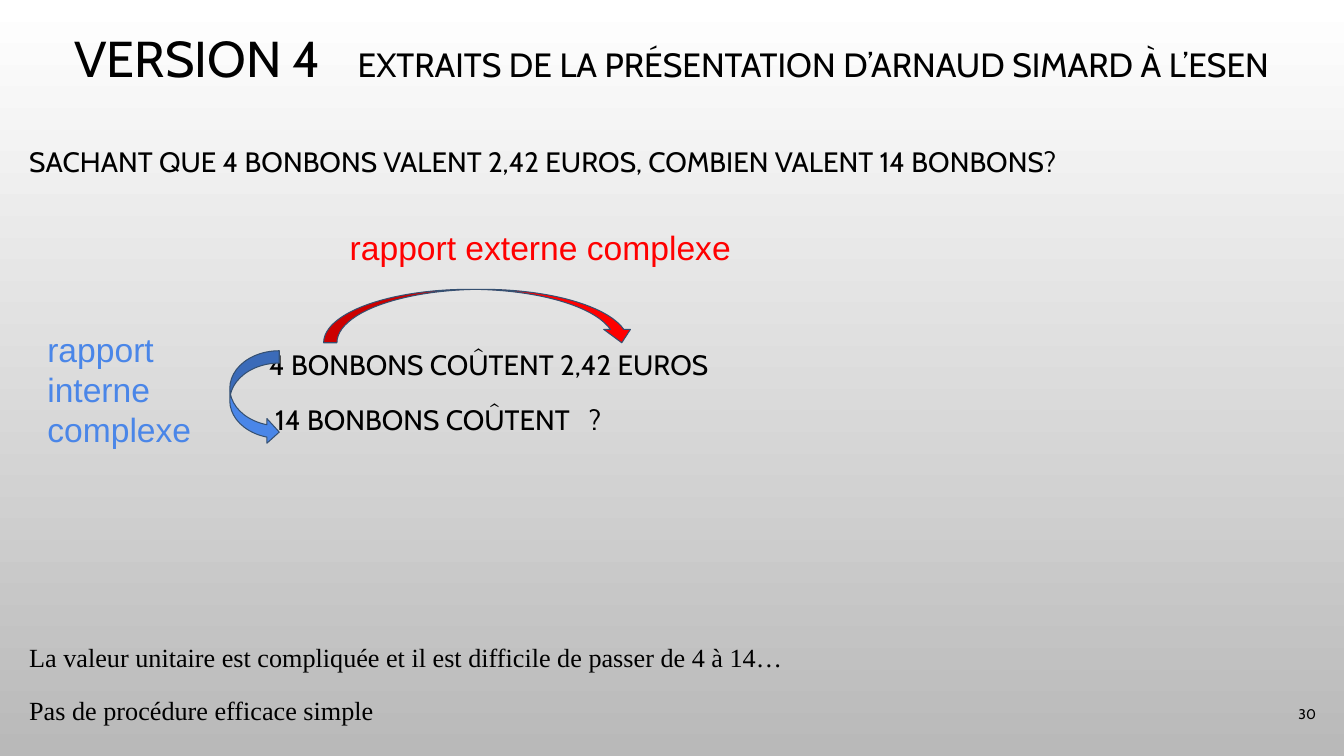
from dataclasses import dataclass

from pptx import Presentation
from pptx.dml.color import RGBColor
from pptx.enum.shapes import MSO_SHAPE
from pptx.enum.text import MSO_ANCHOR, PP_ALIGN
from pptx.util import Inches, Pt

WIDTH, HEIGHT = Inches(13.33), Inches(7.5)
COLUMN, ROW = WIDTH / 100, HEIGHT / 100


@dataclass(frozen=True)
class Theme:
    ink: str = "000000"
    external: str = "FF0000"
    internal: str = "4A86E8"
    outline: str = "355071"
    sky: str = "FFFFFF"
    ground: str = "B9B9B9"
    display: str = "Cabin"
    label: str = "Arial"
    prose: str = "Times New Roman"
    title_size: float = 36
    label_size: float = 24
    body_size: float = 20
    prose_size: float = 18.7
    number_size: float = 10
    outline_width: float = 0.75


@dataclass(frozen=True)
class Box:
    left: float
    top: float
    width: float
    height: float

    def inner(self, column, row, columns, rows):
        return Box(self.left + column, self.top + row, columns, rows)

    def emu(self):
        return (round(self.left * COLUMN), round(self.top * ROW),
                round(self.width * COLUMN), round(self.height * ROW))


THEME = Theme()


def apply(target, formats):
    for attribute, value in formats.items():
        setattr(target, attribute, value)


def add_run(paragraph, words, font, size, color=THEME.ink, tracking=0):
    run = paragraph.add_run()
    run.text = words
    apply(run.font, {"name": font, "size": Pt(size)})
    run.font.color.rgb = RGBColor.from_string(color)
    if tracking:
        run._r.get_or_add_rPr().set("spc", str(tracking * 100))


def add_frame(slide, box, inset=0.13, anchor=MSO_ANCHOR.TOP):
    frame = slide.shapes.add_textbox(*box.emu()).text_frame
    sides = ("margin_left", "margin_top", "margin_right", "margin_bottom")
    apply(frame, dict.fromkeys(sides, Inches(inset)))
    apply(frame, {"word_wrap": True, "vertical_anchor": anchor})
    return frame


def add_lines(slide, box, lines, font, size, color=THEME.ink, spacing=1.0, gap=0):
    frame = add_frame(slide, box)
    for index, words in enumerate(lines):
        paragraph = frame.add_paragraph() if index else frame.paragraphs[0]
        before = Pt(gap if index else 0)
        apply(paragraph, {"line_spacing": spacing, "space_before": before})
        add_run(paragraph, words, font, size, color)
    return frame


def add_arrow(slide, box, kind, color):
    arrow = slide.shapes.add_shape(kind, *box.emu())
    arrow.shadow.inherit = False
    arrow.fill.solid()
    arrow.fill.fore_color.rgb = RGBColor.from_string(color)
    arrow.line.color.rgb = RGBColor.from_string(THEME.outline)
    arrow.line.width = Pt(THEME.outline_width)


def paint_background(slide):
    fill = slide.background.fill
    fill.gradient()
    fill.gradient_angle = 270
    for stop, color in zip(fill.gradient_stops, (THEME.sky, THEME.ground)):
        stop.color.rgb = RGBColor.from_string(color)


def build_title(slide, box):
    heading = add_frame(slide, box).paragraphs[0]
    apply(heading, {"alignment": PP_ALIGN.CENTER, "line_spacing": 0.9})
    add_run(heading, "VERSION 4", THEME.display, THEME.title_size)
    add_run(heading, " ", THEME.display, THEME.title_size, tracking=18)
    add_run(heading, "EXTRAITS DE LA PRÉSENTATION D’ARNAUD SIMARD À L’ESEN",
            THEME.display, THEME.label_size)


def build_question(slide, box):
    add_lines(slide, box,
              ["SACHANT QUE 4 BONBONS VALENT 2,42 EUROS, COMBIEN VALENT 14 BONBONS?"],
              THEME.display, THEME.body_size, spacing=1.2)


def build_ratios(slide, box):
    costs = add_lines(slide, box.inner(16.5, 15.07, 37.5, 15.33),
                      ["4 BONBONS COÛTENT 2,42 EUROS", "14 BONBONS COÛTENT"],
                      THEME.display, THEME.body_size, spacing=1.2, gap=10.7)
    unknown = costs.paragraphs[1]
    unknown._p.get_or_add_pPr().set("marL", str(Inches(0.06)))
    add_run(unknown, " ", THEME.display, THEME.body_size, tracking=9)
    add_run(unknown, "?", THEME.display, THEME.body_size)

    ratios = [
        (["rapport", "interne", "complexe"], THEME.internal,
         (0, 13.47, 13.28, 21.6),
         MSO_SHAPE.CURVED_RIGHT_ARROW, (14.55, 18.13, 3.68, 12.4)),
        (["rapport externe complexe"], THEME.external,
         (22.5, 0, 35.33, 8.93),
         MSO_SHAPE.CURVED_DOWN_ARROW, (21.53, 10, 23.18, 7.07)),
    ]
    for lines, color, label_place, kind, arrow_place in ratios:
        add_arrow(slide, box.inner(*arrow_place), kind, color)
        add_lines(slide, box.inner(*label_place), lines,
                  THEME.label, THEME.label_size, color)


def build_conclusion(slide, box):
    add_lines(slide, box,
              ["La valeur unitaire est compliquée et il est difficile de passer de 4 à 14…",
               "Pas de procédure efficace simple"],
              THEME.prose, THEME.prose_size, spacing=1.2, gap=10.7)


def build_number(slide, box):
    number = add_frame(slide, box, 0.1, MSO_ANCHOR.MIDDLE).paragraphs[0]
    number.alignment = PP_ALIGN.RIGHT
    add_run(number, "30", THEME.display, THEME.number_size)


def main():
    deck = Presentation()
    apply(deck, {"slide_width": WIDTH, "slide_height": HEIGHT})
    slide = deck.slides.add_slide(deck.slide_layouts[6])
    paint_background(slide)
    build_title(slide, Box(3.38, 2.8, 93.18, 11.2))
    build_question(slide, Box(1.2, 16.53, 95.35, 9))
    build_ratios(slide, Box(2.55, 28.27, 57.83, 35.07))
    build_conclusion(slide, Box(1.2, 82.27, 95.35, 16))
    build_number(slide, Box(92.65, 90.67, 6, 7.6))
    deck.save("out.pptx")


if __name__ == "__main__":
    main()
